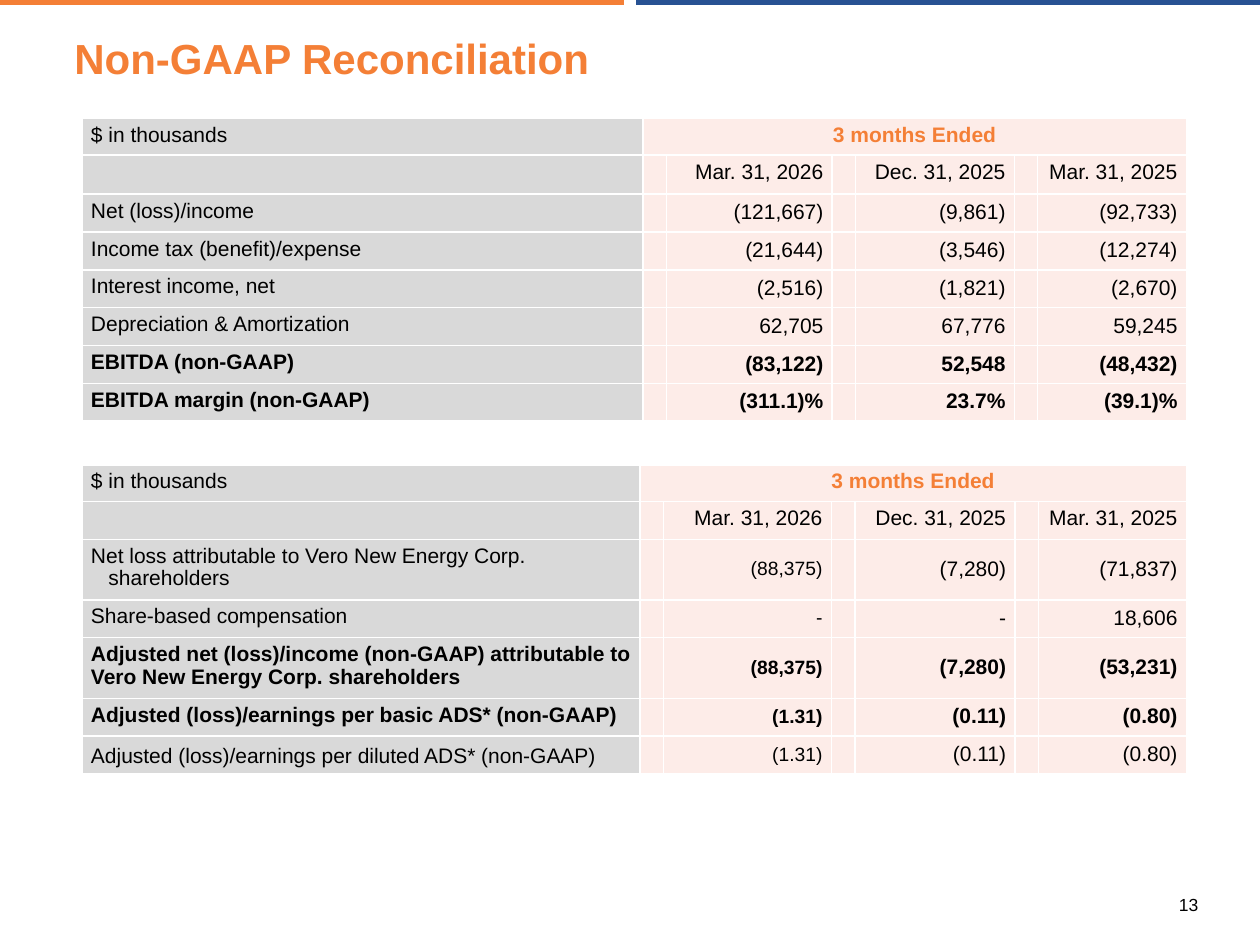
import pptx
import pptx.util
import pptx.dml.color
import pptx.enum.shapes
import pptx.enum.text
import pptx.oxml
import pptx.oxml.ns

Pt = pptx.util.Pt
ALIGN = pptx.enum.text.PP_ALIGN
ANCHOR = pptx.enum.text.MSO_ANCHOR
ORANGE, BLUE, BLACK = "F47F36", "285293", "000000"
GRAY, PINK, WHITE = "D9D9D9", "FDECE8", "FFFFFF"
DATES = ["Mar. 31, 2026", "Dec. 31, 2025", "Mar. 31, 2025"]

INCOME = {
    "cols": [320.4, 13.4, 94.8, 13.4, 90.7, 13.4, 84.9],
    "rows": [20.5, 22.3] + [20.57] * 6,
    "bold": [4, 5], "hang": [0, 5], "first": 12, "low": [],
    "data": [
        ["Net (loss)/income", "(121,667)", "(9,861)", "(92,733)"],
        ["Income tax (benefit)/expense", "(21,644)", "(3,546)", "(12,274)"],
        ["Interest income, net", "(2,516)", "(1,821)", "(2,670)"],
        ["Depreciation & Amortization", "62,705", "67,776", "59,245"],
        ["EBITDA (non-GAAP)", "(83,122)", "52,548", "(48,432)"],
        ["EBITDA margin (non-GAAP)", "(311.1)%", "23.7%", "(39.1)%"],
    ],
}
SHARES = {
    "cols": [318.7, 13.4, 96, 13.4, 91.5, 13.4, 84.6],
    "rows": [20.6, 21.1, 33.8, 20.6, 34.2, 20.6, 20.6],
    "bold": [2, 3], "hang": [0], "first": 11, "low": [4],
    "data": [
        ["Net loss attributable to Vero New Energy Corp. shareholders",
         "(88,375)", "(7,280)", "(71,837)"],
        ["Share-based compensation", "-", "-", "18,606"],
        ["Adjusted net (loss)/income (non-GAAP) attributable to Vero New Energy Corp. shareholders",
         "(88,375)", "(7,280)", "(53,231)"],
        ["Adjusted (loss)/earnings per basic ADS* (non-GAAP)", "(1.31)", "(0.11)", "(0.80)"],
        ["Adjusted (loss)/earnings per diluted ADS* (non-GAAP)", "(1.31)", "(0.11)", "(0.80)"],
    ],
}


def paint(color, code):
    """Give a fill, line or font the colour of a hex string."""
    if hasattr(color, "solid"):
        color.solid()
        color = color.fore_color
    else:
        color = color.color
    color.rgb = pptx.dml.color.RGBColor.from_string(code)


def apply(thing, form):
    """Set each attribute named in a dict of format values."""
    for key, value in form.items():
        setattr(thing, key, value)


def write(frame, text, size, code=BLACK, bold=False, align=ALIGN.LEFT, gap=1.0):
    """Write one formatted paragraph into a text frame."""
    par = frame.paragraphs[0]
    apply(par, {"alignment": align, "line_spacing": gap})
    run = par.add_run()
    apply(run, {"text": text})
    apply(run.font, {"name": "Arial", "size": Pt(size), "bold": bold})
    paint(run.font, code)
    return par


def stripe(slide, left, top, width, code):
    """Draw one thick line of the top band."""
    kind = pptx.enum.shapes.MSO_CONNECTOR.STRAIGHT
    line = slide.shapes.add_connector(kind, Pt(left), Pt(top), Pt(left + width), Pt(top))
    apply(line.line, {"width": Pt(3)})
    paint(line.line, code)
    line._element.spPr.append(pptx.oxml.parse_xml(
        f'<a:effectLst {pptx.oxml.ns.nsdecls("a")}/>'))


def title(slide, left, top, width, height):
    """Place the slide title."""
    shape = slide.shapes.title
    apply(shape, {"left": Pt(left), "top": Pt(top), "width": Pt(width), "height": Pt(height)})
    apply(shape.text_frame, {"vertical_anchor": ANCHOR.TOP, "word_wrap": True,
                             "auto_size": pptx.enum.text.MSO_AUTO_SIZE.NONE})
    write(shape.text_frame, "Non-GAAP Reconciliation", 24, ORANGE, True)


def number(slide, left, top, width, height):
    """Place the page number."""
    box = slide.shapes.add_textbox(Pt(left), Pt(top), Pt(width), Pt(height))
    apply(box.text_frame, {"word_wrap": True, "vertical_anchor": ANCHOR.BOTTOM,
                           "margin_left": 0, "margin_right": 0})
    write(box.text_frame, "13", 10, align=ALIGN.RIGHT)


def dress(cell, code):
    """Give a cell its fill, white borders and margins."""
    for side in "LRTB":
        cell._tc.get_or_add_tcPr().append(pptx.oxml.parse_xml(
            f'<a:ln{side} {pptx.oxml.ns.nsdecls("a")} w="12700"><a:solidFill>'
            f'<a:srgbClr val="{WHITE}"/></a:solidFill></a:ln{side}>'))
    paint(cell.fill, code)
    apply(cell, {"margin_left": Pt(5), "margin_right": Pt(5),
                 "margin_top": Pt(3.6), "margin_bottom": Pt(3.6)})
    cell.text_frame.paragraphs[0]._p.get_or_add_endParaRPr().set("sz", "1200")


def fill_row(grid, row, item, plan):
    """Write a label and its three values into one row."""
    label, *values = item
    bold = row in plan["bold"]
    cell = grid.cell(row + 2, 0)
    par = write(cell.text_frame, label, 12, bold=bold, gap=0.95)
    if row in plan["hang"]:
        prop = par._p.get_or_add_pPr()
        prop.set("marL", str(Pt(10)))
        prop.set("indent", str(-Pt(10)))
    apply(cell, {"vertical_anchor": ANCHOR.BOTTOM if row in plan["low"] else ANCHOR.TOP})
    for col, value in zip((2, 4, 6), values):
        cell = grid.cell(row + 2, col)
        apply(cell, {"vertical_anchor": ANCHOR.MIDDLE, "margin_top": 0, "margin_bottom": 0})
        size = plan["first"] if col == 2 else 12
        write(cell.text_frame, value, size, bold=bold, align=ALIGN.RIGHT, gap=0.95)


def table(slide, left, top, plan):
    """Place one table with its header and rows."""
    cols, rows = plan["cols"], plan["rows"]
    frame = slide.shapes.add_table(len(rows), len(cols), Pt(left), Pt(top),
                                   Pt(sum(cols)), Pt(sum(rows)))
    grid = frame.table
    apply(grid, {"first_row": False, "horz_banding": False})
    for col, width in zip(grid.columns, cols):
        apply(col, {"width": Pt(width)})
    for row, height in zip(grid.rows, rows):
        apply(row, {"height": Pt(height)})
        for spot, cell in enumerate(row.cells):
            dress(cell, PINK if spot else GRAY)
    grid.cell(0, 1).merge(grid.cell(0, 6))
    write(grid.cell(0, 0).text_frame, "$ in thousands", 12, gap=0.95)
    write(grid.cell(0, 1).text_frame, "3 months Ended", 12, ORANGE, True, ALIGN.CENTER, 0.95)
    for col, date in zip((2, 4, 6), DATES):
        write(grid.cell(1, col).text_frame, date, 12, align=ALIGN.RIGHT, gap=0.95)
    for row, item in enumerate(plan["data"]):
        fill_row(grid, row, item, plan)


def main():
    """Build the slide and save it."""
    deck = pptx.Presentation()
    apply(deck, {"slide_width": Pt(720), "slide_height": Pt(540)})
    slide = deck.slides.add_slide(deck.slide_layouts[5])
    for left, code in ((0, ORANGE), (363.6, BLUE)):
        stripe(slide, left, 1.44, 356.4, code)
    number(slide, 546.5, 498.2, 138.2, 28)
    for top, plan in ((67.7, INCOME), (265.6, SHARES)):
        table(slide, 47, top, plan)
    title(slide, 35.3, 15.1, 649.4, 27.4)
    deck.save("out.pptx")


if __name__ == "__main__":
    main()
